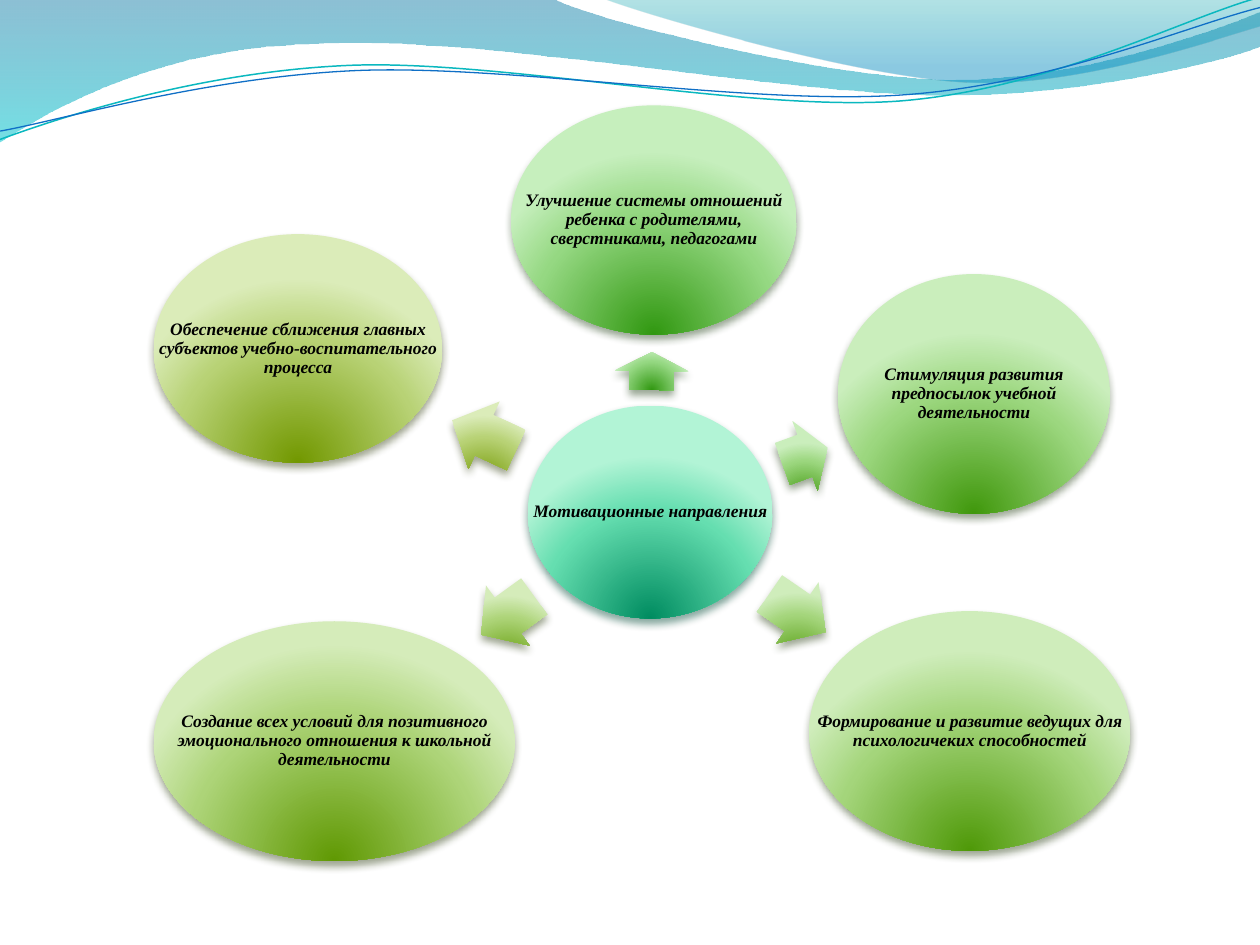
from lxml.etree import SubElement
from pptx import Presentation
from pptx.dml.color import RGBColor
from pptx.enum.shapes import MSO_SHAPE
from pptx.enum.text import MSO_ANCHOR, PP_ALIGN
from pptx.oxml.ns import qn
from pptx.util import Pt

COLORS = {
    "text": "000000",
    "teal line": "0AB8BF",
    "blue line": "0F6FC6",
    "wave blue": "0074A1",
    "wave aqua": "00C6CF",
    "crest teal": "00A1A9",
    "crest blue": "008BBF",
    "mint": ("008C60", "65DEB0", "B2F4D6", "044A37"),
    "green": ("319811", "95D882", "C6EFBD", "2B4821"),
    "grass": ("40980C", "9CD77F", "CAEEBC", "2E471F"),
    "leaf": ("4F9908", "A4D57B", "CFEDBB", "32461D"),
    "lime": ("609903", "ADD478", "D5ECBA", "36461B"),
    "olive": ("729800", "B8D275", "DBECB9", "3A4519"),
}

CENTER = ("Мотивационные направления", "mint", (301.6, 231.8, 139.8, 121.6))
DIRECTIONS = [
    ("Улучшение системы отношений ребенка с родителями, сверстниками, педагогами",
     "green", (292, 60.2, 163.2, 131), (361.6, 190.8, 21.6, 42.4), 270.7),
    ("Стимуляция развития предпосылок учебной деятельности",
     "grass", (478.8, 156.6, 155.5, 137), (446.3, 239.2, 27.4, 42.4), 340),
    ("Формирование и развитие ведущих для психологичеких способностей",
     "leaf", (462.3, 349.2, 183.6, 137), (436.3, 329, 38.9, 42.4), 34.5),
    ("Создание всех условий для позитивного эмоционального отношения к школьной деятельности",
     "lime", (87.8, 355, 206.6, 137), (271.4, 330.5, 37.4, 42.4), 144.1),
    ("Обеспечение сближения главных субъектов учебно-воспитательного процесса",
     "olive", (87.8, 133.8, 164.9, 130.6), (256.5, 227.4, 40.3, 42.4), 204.9),
]

WAVE = [
    [(0, -0.5)], [(317, -0.5)],
    [(343, 12.2), (478.1, 45.2), (545.8, 45.2)],
    [(614.2, 45.2), (689.8, 18.7), (720, 6.5)],
    [(720.7, 26)],
    [(707.8, 31.7), (626.4, 54.7), (537.1, 54.2)],
    [(447.8, 54), (275, 20.2), (185, 24.5)],
    [(92.9, 26), (33.1, 60), (-0.7, 81.4)],
]
CREST = [
    [(344.9, -0.7)],
    [(366.5, 8), (491, 44.6), (553.7, 47)],
    [(616.3, 49.7), (691.9, 23), (720, 15)],
    [(720, 0)],
]
TEAL_LINE = [
    [(0, 79.7)],
    [(34.6, 67), (113.8, 41), (199.4, 37.4)],
    [(284.4, 33.8), (427, 64), (513.4, 57.8)],
    [(599.8, 51.1), (675.4, 10.8), (718.6, -1.2)],
]
BLUE_LINE = [
    [(0, 74.9)],
    [(33.8, 69), (118, 44), (203.8, 40.3)],
    [(290.2, 36.7), (430, 60.5), (516.2, 54.2)],
    [(601.9, 48.2), (677.5, 15), (720, 4.3)],
]


class Diagram:
    font = "Times New Roman"
    size = Pt(10)
    inset = Pt(0.8)

    def __init__(self, page):
        self.page = page

    def gradient(self, shape, stops):
        shape.fill.background()
        blank = shape._element.spPr.find(qn("a:noFill"))
        fill = blank.makeelement(qn("a:gradFill"), {"rotWithShape": "0"})
        blank.getparent().replace(blank, fill)
        stop_list = SubElement(fill, qn("a:gsLst"))
        for position, color, opacity in stops:
            stop = SubElement(stop_list, qn("a:gs"), pos=str(position * 1000))
            self.color(stop, color, opacity)
        return fill

    def color(self, parent, color, opacity):
        element = SubElement(parent, qn("a:srgbClr"), val=color)
        SubElement(element, qn("a:alpha"), val=str(opacity * 1000))

    def freeform(self, segments, close):
        segments = [[(Pt(x), Pt(y)) for x, y in segment] for segment in segments]
        start, *ends = [segment[-1] for segment in segments]
        builder = self.page.shapes.build_freeform(*start, scale=1.0)
        builder.add_line_segments(ends, close=close)
        shape = builder.convert_to_shape()
        shape.shadow.inherit = False
        lines = list(shape._element.iter(qn("a:lnTo")))
        for line, segment in zip(lines, segments[1:]):
            if len(segment) == 3:
                curve = line.makeelement(qn("a:cubicBezTo"))
                line.getparent().replace(line, curve)
                for x, y in segment:
                    SubElement(curve, qn("a:pt"), x=str(x - shape.left), y=str(y - shape.top))
        return shape

    def wave(self, segments, stops):
        shape = self.freeform(segments, True)
        shape.line.fill.background()
        fill = self.gradient(shape, stops)
        SubElement(fill, qn("a:lin"), ang="5400000", scaled="0")

    def curve(self, segments, color, width):
        shape = self.freeform(segments, False)
        shape.fill.background()
        shape.line.color.rgb = RGBColor.from_string(color)
        shape.line.width = Pt(width)

    def glossy(self, kind, bounds, palette, rotation=0):
        dark, middle, light, shade = COLORS[palette]
        shape = self.page.shapes.add_shape(kind, *map(Pt, bounds))
        shape.rotation = rotation
        shape.line.fill.background()
        fill = self.gradient(shape, [(0, dark, 100), (68, middle, 100), (100, light, 100)])
        focus = SubElement(fill, qn("a:path"), path="circle")
        SubElement(focus, qn("a:fillToRect"), l="50000", t="130000", r="50000", b="-30000")
        shape.shadow.inherit = False
        effects = shape._element.spPr.find(qn("a:effectLst"))
        shadow = SubElement(effects, qn("a:outerShdw"), blurRad=str(Pt(4.5)),
                            dist=str(Pt(3)), dir="5400000", rotWithShape="0")
        self.color(shadow, shade, 48)
        return shape

    def arrow(self, bounds, palette, rotation):
        shape = self.glossy(MSO_SHAPE.RIGHT_ARROW, bounds, palette, rotation)
        shape.adjustments[0] = 0.6
        shape.adjustments[1] = 0.5

    def bubble(self, text, palette, bounds):
        self.glossy(MSO_SHAPE.OVAL, bounds, palette)
        frame = self.page.shapes.add_textbox(*map(Pt, bounds)).text_frame
        frame.word_wrap = True
        frame.vertical_anchor = MSO_ANCHOR.MIDDLE
        frame.margin_left = frame.margin_right = self.inset
        frame.margin_top = frame.margin_bottom = self.inset
        para = frame.paragraphs[0]
        para.text = text
        para.alignment = PP_ALIGN.CENTER
        para.line_spacing = 0.9
        para.space_after = Pt(3.5)
        para.font.name = self.font
        para.font.size = self.size
        para.font.bold = para.font.italic = True
        para.font.color.rgb = RGBColor.from_string(COLORS["text"])


def main():
    deck = Presentation()
    deck.slide_width, deck.slide_height = Pt(720), Pt(540)
    page = deck.slides.add_slide(deck.slide_layouts[6])
    diagram = Diagram(page)
    diagram.wave(WAVE, [(0, COLORS["wave blue"], 45), (100, COLORS["wave aqua"], 55)])
    diagram.wave(CREST, [(0, COLORS["crest teal"], 30), (80, COLORS["crest blue"], 45)])
    diagram.curve(TEAL_LINE, COLORS["teal line"], 0.85)
    diagram.curve(BLUE_LINE, COLORS["blue line"], 0.75)
    diagram.bubble(*CENTER)
    for text, palette, bounds, arrow_bounds, rotation in DIRECTIONS:
        diagram.arrow(arrow_bounds, palette, rotation)
        diagram.bubble(text, palette, bounds)
    deck.save("out.pptx")


if __name__ == "__main__":
    main()
